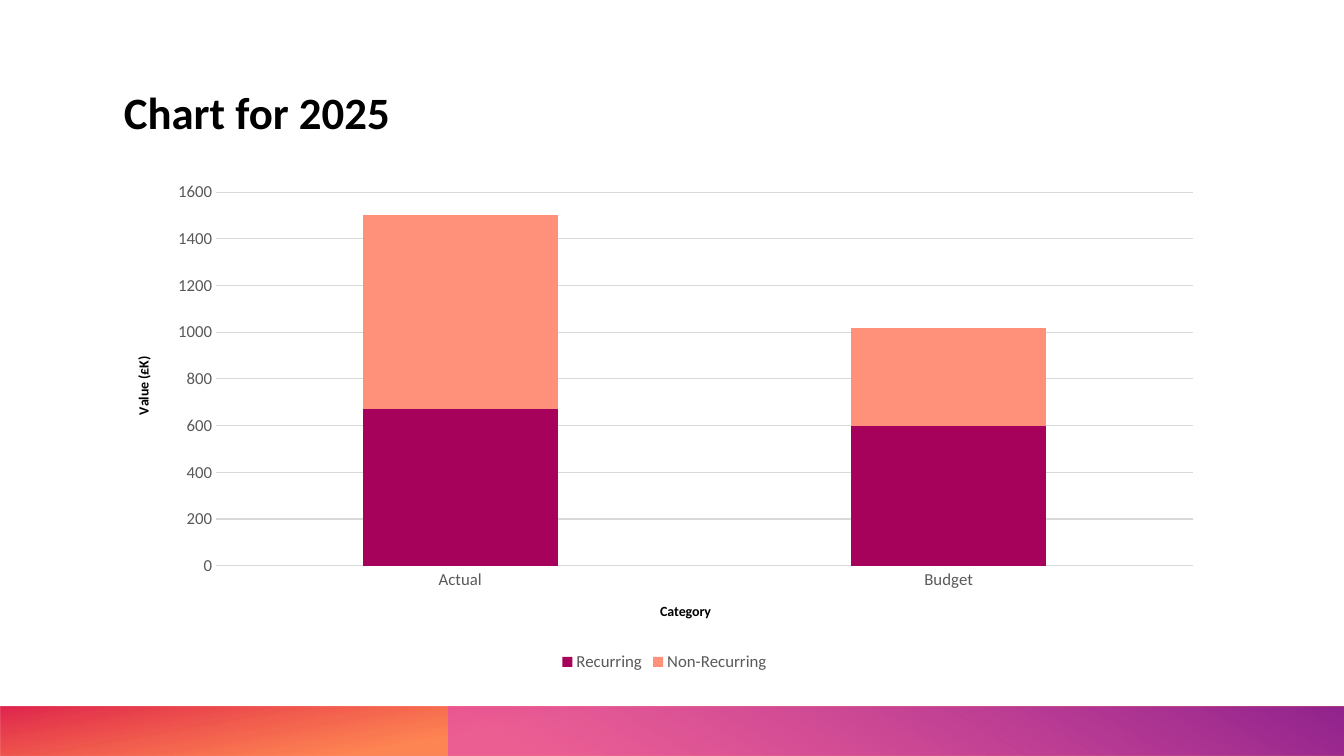
"""Build the 2025 stacked column chart slide."""
from dataclasses import dataclass
from lxml import etree
from pptx import Presentation, util as u
from pptx.chart.data import CategoryChartData
from pptx.dml.color import RGBColor
from pptx.enum import chart as ch, shapes, text
from pptx.oxml.ns import nsdecls

PX = 914400 / 100.8


@dataclass(frozen=True)
class Theme:
    font: str = "Calibri"
    black: str = "000000"
    grey: str = "595959"
    grid: str = "D9D9D9"
    series: tuple = ("A6025C", "FF907A")
    warm: tuple = ((62, "FE4A00", 67), (100, "DA002F", 85))
    violet: tuple = ((9, "E349BB", 62), (99, "92248E", 100))
    title: int = 32
    label: int = 12
    axis_title: int = 10


T = Theme()


def px(*lengths):
    return [u.Emu(round(n * PX)) for n in lengths]


def set_all(obj, values):
    for name, value in values.items():
        setattr(obj, name, value)


def style_font(font, size, color, bold=False):
    set_all(font, {"name": T.font, "size": u.Pt(size), "bold": bold})
    font.color.rgb = RGBColor.from_string(color)


def add_band(s, box, stops, angle, rotation=0):
    sp = s.shapes.add_shape(shapes.MSO_SHAPE.RECTANGLE, *px(*box))
    sp.shadow.inherit = False
    sp.line.fill.background()
    sp.rotation = rotation
    spPr = sp._element.spPr
    spPr.xfrm.set("flipH", "1")
    gs = "".join(
        f'<a:gs pos="{pos * 1000}"><a:srgbClr val="{color}">'
        f'<a:alpha val="{alpha * 1000}"/></a:srgbClr></a:gs>'
        for pos, color, alpha in stops)
    grad = etree.fromstring(
        f'<a:gradFill {nsdecls("a")} rotWithShape="1"><a:gsLst>{gs}</a:gsLst>'
        f'<a:lin ang="{angle * 60000}" scaled="0"/></a:gradFill>')
    spPr.prstGeom.addnext(grad)


def add_title(s, box, words):
    tf = s.shapes.add_textbox(*px(*box)).text_frame
    set_all(tf, {"word_wrap": True,
                 "vertical_anchor": text.MSO_ANCHOR.BOTTOM})
    p = tf.paragraphs[0]
    p.line_spacing = 0.9
    r = p.add_run()
    r.text = words
    style_font(r.font, T.title, T.black, True)


def style_line(line):
    line.color.rgb = RGBColor.from_string(T.grid)
    line.width = u.Pt(0.75)


def style_axis(axis, words):
    set_all(axis, {"major_tick_mark": ch.XL_TICK_MARK.NONE,
                   "minor_tick_mark": ch.XL_TICK_MARK.NONE})
    style_font(axis.tick_labels.font, T.label, T.grey)
    p = axis.axis_title.text_frame.paragraphs[0]
    r = p.add_run()
    r.text = words
    style_font(r.font, T.axis_title, T.black, True)


def add_stacked_chart(s, box, categories, series):
    data = CategoryChartData()
    data.categories = categories
    for name, values in series.items():
        data.add_series(name, values)
    chart = s.shapes.add_chart(
        ch.XL_CHART_TYPE.COLUMN_STACKED, *px(*box), data).chart
    set_all(chart, {"has_title": False, "has_legend": True})
    style_font(chart.font, T.axis_title, T.black)
    set_all(chart.legend, {"position": ch.XL_LEGEND_POSITION.BOTTOM,
                           "include_in_layout": False})
    style_font(chart.legend.font, T.label, T.grey)
    plot = chart.plots[0]
    set_all(plot, {"gap_width": 150, "overlap": 100,
                   "vary_by_categories": False})
    for ser, color in zip(plot.series, T.series):
        ser.format.fill.solid()
        ser.format.fill.fore_color.rgb = RGBColor.from_string(color)
    style_axis(chart.category_axis, "Category")
    style_line(chart.category_axis.format.line)
    val = chart.value_axis
    style_axis(val, "Value (£K)")
    set_all(val, {"minimum_scale": 0, "maximum_scale": 1600,
                  "major_unit": 200, "has_major_gridlines": True})
    style_line(val.major_gridlines.format.line)
    val.format.line.fill.background()


def main():
    prs = Presentation()
    prs.slide_width, prs.slide_height = px(1344, 756)
    s = prs.slides.add_slide(prs.slide_layouts[6])
    add_band(s, (0, 707, 1344, 49), T.warm, 100, rotation=180)
    add_band(s, (449, 707, 895, 49), T.violet, 240)
    add_title(s, (114, 38, 1101, 106), "Chart for 2025")
    add_stacked_chart(s, (114, 172, 1101, 504), ["Actual", "Budget"], {
        "Recurring": (670, 600),
        "Non-Recurring": (830, 420),
    })
    prs.save("out.pptx")


if __name__ == "__main__":
    main()
